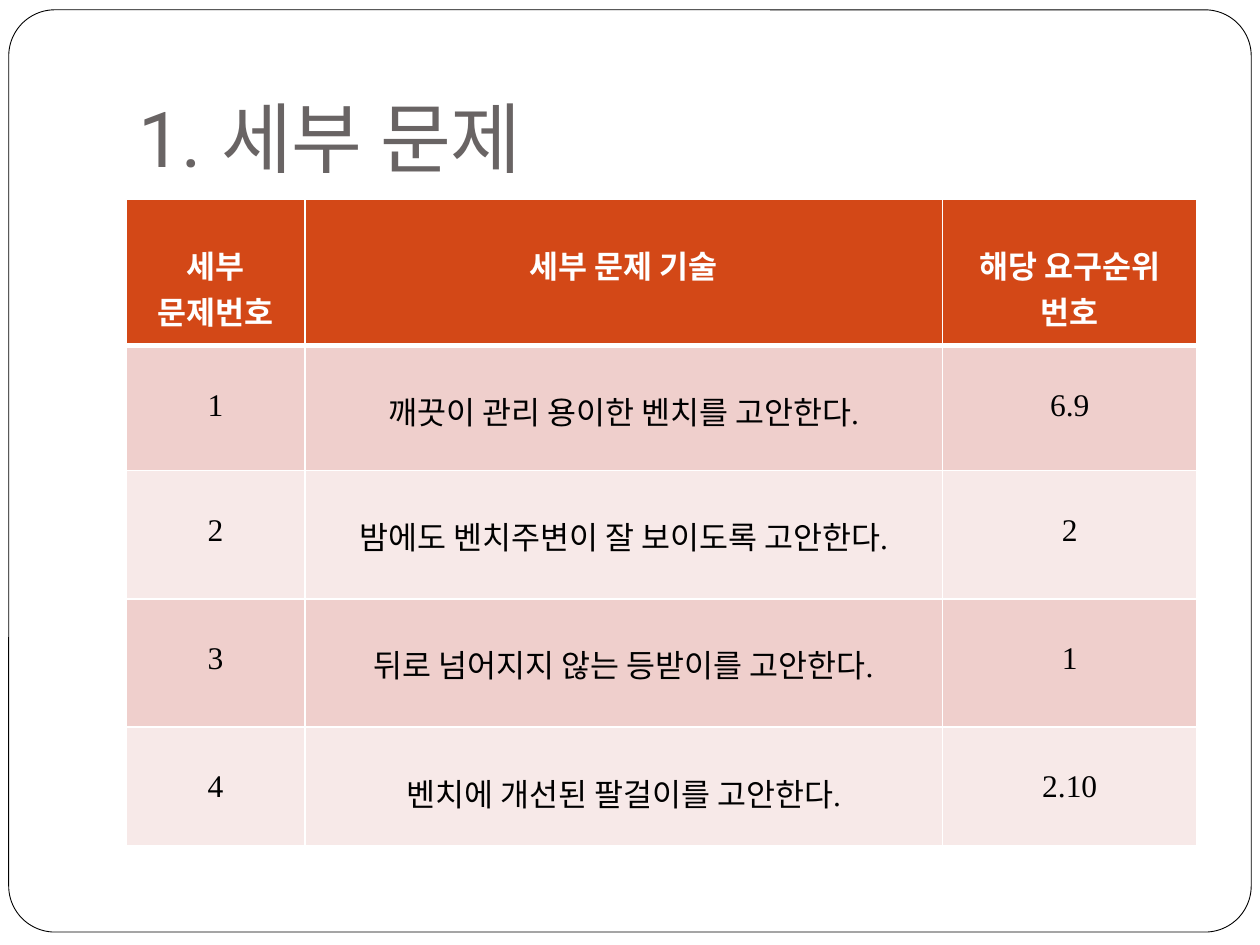
from lxml import etree
from pptx import Presentation
from pptx.dml.color import RGBColor
from pptx.enum.shapes import MSO_SHAPE
from pptx.enum.text import MSO_ANCHOR, PP_ALIGN
from pptx.oxml.ns import qn
from pptx.util import Pt

ROUNDED = MSO_SHAPE.ROUNDED_RECTANGLE
BOTTOM = MSO_ANCHOR.BOTTOM
CENTER = PP_ALIGN.CENTER
COLORS = {
    "white": "FFFFFF",
    "black": "000000",
    "title": "696464",
    "header": "D34817",
    "odd": "EFCFCC",
    "even": "F7E9E8",
}
COLUMN_WIDTHS = [102.2, 364.4, 145.4]
ROW_HEIGHTS = [83.5, 71.3, 73.4, 73.4, 67.7]
ROWS = [
    ["세부 문제번호", "세부 문제 기술", "해당 요구순위\n번호"],
    ["1", "깨끗이 관리 용이한 벤치를 고안한다.", "6.9"],
    ["2", "밤에도 벤치주변이 잘 보이도록 고안한다.", "2"],
    ["3", "뒤로 넘어지지 않는 등받이를 고안한다.", "1"],
    ["4", "벤치에 개선된 팔걸이를 고안한다.", "2.10"],
]


def rgb(name):
    return RGBColor.from_string(COLORS[name])


def add_border(cell, side, width):
    """Draw a white line on one side (L, R, T or B) of a table cell."""
    properties = cell._tc.get_or_add_tcPr()
    line = etree.SubElement(properties, qn(f"a:ln{side}"), w=str(Pt(width)))
    fill = etree.SubElement(line, qn("a:solidFill"))
    etree.SubElement(fill, qn("a:srgbClr"), val=COLORS["white"])


deck = Presentation()
deck.slide_width, deck.slide_height = Pt(720), Pt(540)
page = deck.slides.add_slide(deck.slide_layouts[6])

# Rounded page frame
frame = page.shapes.add_shape(ROUNDED, Pt(5), Pt(5.6), Pt(710), Pt(527))
frame.adjustments[0] = 0.05
frame.shadow.inherit = False
frame.fill.solid()
frame.fill.fore_color.rgb = rgb("white")
frame.line.color.rgb = rgb("black")
frame.line.width = Pt(0.5)

# Title
title = page.shapes.add_textbox(Pt(72), Pt(21.6), Pt(612), Pt(90))
text_frame = title.text_frame
text_frame.word_wrap = True
text_frame.vertical_anchor = BOTTOM
text_frame.margin_bottom = Pt(7.2)
text_frame.text = "1. 세부 문제"
font = text_frame.paragraphs[0].runs[0].font
font.name, font.size = "Roboto", Pt(44)
font.color.rgb = rgb("title")

# Table of detailed problems
table = page.shapes.add_table(
    len(ROWS), len(COLUMN_WIDTHS), Pt(72), Pt(114), Pt(612), Pt(sum(ROW_HEIGHTS))
).table
for column, width in zip(table.columns, COLUMN_WIDTHS):
    column.width = Pt(width)
for row, height in zip(table.rows, ROW_HEIGHTS):
    row.height = Pt(height)

for row_index, texts in enumerate(ROWS):
    is_header = row_index == 0
    fill_name = "header" if is_header else ("even", "odd")[row_index % 2]
    border_widths = {
        "L": 1,
        "R": 1,
        "T": 3 if row_index == 1 else 1,
        "B": 3 if is_header else 1,
    }
    for column_index, text in enumerate(texts):
        cell = table.cell(row_index, column_index)
        cell.margin_left = cell.margin_right = Pt(6.8)
        cell.margin_top, cell.margin_bottom = Pt(24.3), Pt(3.6)
        for side, width in border_widths.items():
            add_border(cell, side, width)
        cell.fill.solid()
        cell.fill.fore_color.rgb = rgb(fill_name)
        cell.text_frame.text = text
        for para in cell.text_frame.paragraphs:
            para.alignment = CENTER
            font = para.runs[0].font
            font.name, font.size = "Times New Roman", Pt(18)
            font.bold = is_header
            font.color.rgb = rgb("white" if is_header else "black")

deck.save("out.pptx")
